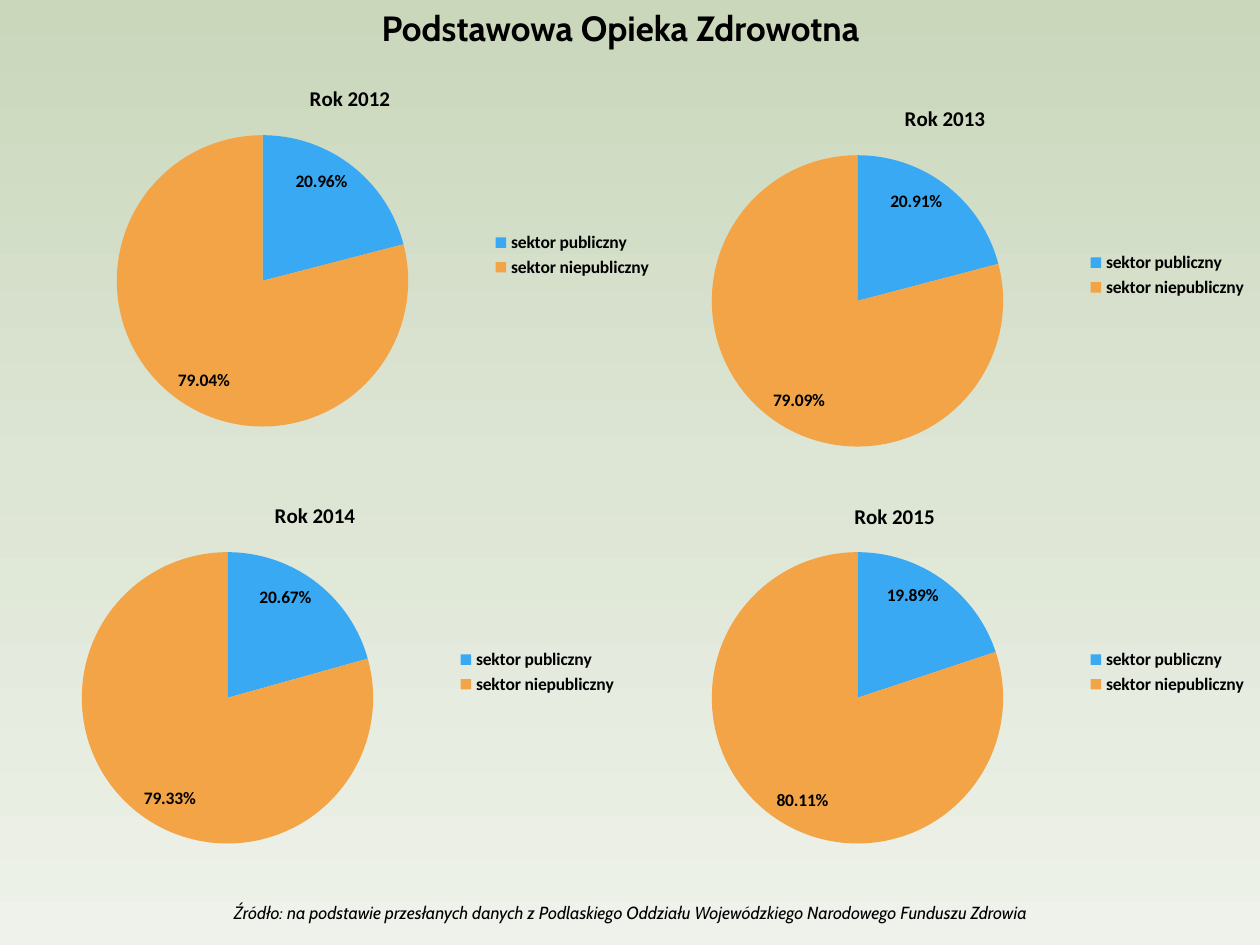
import copy
import dataclasses

import lxml.etree
import pptx
import pptx.chart.data
import pptx.dml.color
import pptx.enum.chart
import pptx.enum.text
import pptx.oxml
import pptx.oxml.ns
import pptx.util

EMU_PER_PX = 914400 // 126


@dataclasses.dataclass(frozen=True)
class Theme:
    text: str = "000000"
    slices: tuple = ("3AA9F4", "F3A447")
    background: tuple = ("CAD7BB", "DDE5D4", "EEF2EA")
    text_font: str = "Cabin"
    chart_font: str = "Calibri"
    title_size: int = 20
    chart_title_size: int = 12
    small_size: int = 10


def color(value):
    return pptx.dml.color.RGBColor.from_string(value)


def px(*lengths):
    return [pptx.util.Emu(length * EMU_PER_PX) for length in lengths]


def style_font(font, name, size, value, bold=False, italic=False):
    font.name = name
    font.size = pptx.util.Pt(size)
    font.color.rgb = color(value)
    font.bold = bold
    font.italic = italic


def write_text(text_frame, text, **font_format):
    text_frame.word_wrap = True
    text_frame.vertical_anchor = pptx.enum.text.MSO_ANCHOR.MIDDLE
    paragraph = text_frame.paragraphs[0]
    paragraph.alignment = pptx.enum.text.PP_ALIGN.CENTER
    run = paragraph.add_run()
    run.text = text
    style_font(run.font, **font_format)


class SlideBuilder:
    def __init__(self, slide, theme):
        self.slide = slide
        self.theme = theme

    def background(self):
        fill = self.slide.background.fill
        fill.gradient()
        fill.gradient_angle = 270
        stop_list = self.slide.element.find(".//" + pptx.oxml.ns.qn("a:gsLst"))
        stop_list.insert(1, copy.deepcopy(stop_list[0]))
        for index, value in enumerate(self.theme.background):
            stop = fill.gradient_stops[index]
            stop.position = index / 2
            stop.color.rgb = color(value)

    def title(self, text, left, top, width, height):
        shape = self.slide.shapes.title
        shape.left, shape.top, shape.width, shape.height = px(left, top, width, height)
        write_text(shape.text_frame, text, name=self.theme.text_font,
                   size=self.theme.title_size, value=self.theme.text, bold=True)

    def source_note(self, text, left, top, width, height):
        shape = self.slide.shapes.add_textbox(*px(left, top, width, height))
        write_text(shape.text_frame, text, name=self.theme.text_font,
                   size=self.theme.small_size, value=self.theme.text, italic=True)

    def pie(self, title, public_share, left, top, title_position=None):
        theme = self.theme
        data = pptx.chart.data.CategoryChartData(number_format="0.00%")
        data.categories = ["sektor publiczny", "sektor niepubliczny"]
        data.add_series("Series 1", [public_share, round(1 - public_share, 4)])
        chart = self.slide.shapes.add_chart(
            pptx.enum.chart.XL_CHART_TYPE.PIE, *px(left, top, 630, 378), data).chart
        style_font(chart.font, theme.chart_font, theme.small_size, theme.text, bold=True)

        chart.has_title = True
        write_text(chart.chart_title.text_frame, title, name=theme.chart_font,
                   size=theme.chart_title_size, value=theme.text, bold=True)
        chart.chart_title.include_in_layout = False
        if title_position:
            self.place_chart_title(chart, *title_position)

        chart.has_legend = True
        chart.legend.position = pptx.enum.chart.XL_LEGEND_POSITION.RIGHT
        chart.legend.include_in_layout = False

        plot = chart.plots[0]
        plot.vary_by_categories = True
        plot.has_data_labels = True
        labels = plot.data_labels
        labels.show_value = True
        labels.show_percentage = False
        labels.number_format = "0.00%"
        labels.number_format_is_linked = False
        labels.position = pptx.enum.chart.XL_LABEL_POSITION.INSIDE_END
        style_font(labels.font, theme.chart_font, theme.small_size, theme.text, bold=True)
        for index, value in enumerate(theme.slices):
            fill = plot.series[0].points[index].format.fill
            fill.solid()
            fill.fore_color.rgb = color(value)

    def place_chart_title(self, chart, x, y):
        qn = pptx.oxml.ns.qn
        title = chart.chart_title._element
        for old_layout in title.findall(qn("c:layout")):
            title.remove(old_layout)
        layout = pptx.oxml.parse_xml(
            f'<c:layout {pptx.oxml.ns.nsdecls("c")}><c:manualLayout/></c:layout>')
        settings = {"xMode": "edge", "yMode": "edge", "x": x, "y": y}
        for name, value in settings.items():
            lxml.etree.SubElement(layout[0], qn(f"c:{name}")).set("val", str(value))
        title.find(qn("c:tx")).addnext(layout)


def main():
    presentation = pptx.Presentation()
    presentation.slide_width, presentation.slide_height = px(1260, 945)
    slide = presentation.slides.add_slide(presentation.slide_layouts[5])
    builder = SlideBuilder(slide, Theme())
    builder.background()
    builder.title("Podstawowa Opieka Zdrowotna", 184, 0, 873, 55)
    builder.pie("Rok 2012", 0.2096, 35, 66)
    builder.pie("Rok 2013", 0.2091, 630, 86)
    builder.pie("Rok 2014", 0.2067, 0, 483)
    builder.pie("Rok 2015", 0.1989, 630, 483, title_position=(0.35, 0.04))
    builder.source_note(
        "Źródło: na podstawie przesłanych danych z Podlaskiego Oddziału "
        "Wojewódzkiego Narodowego Funduszu Zdrowia", 164, 895, 932, 34)
    presentation.save("out.pptx")


if __name__ == "__main__":
    main()
